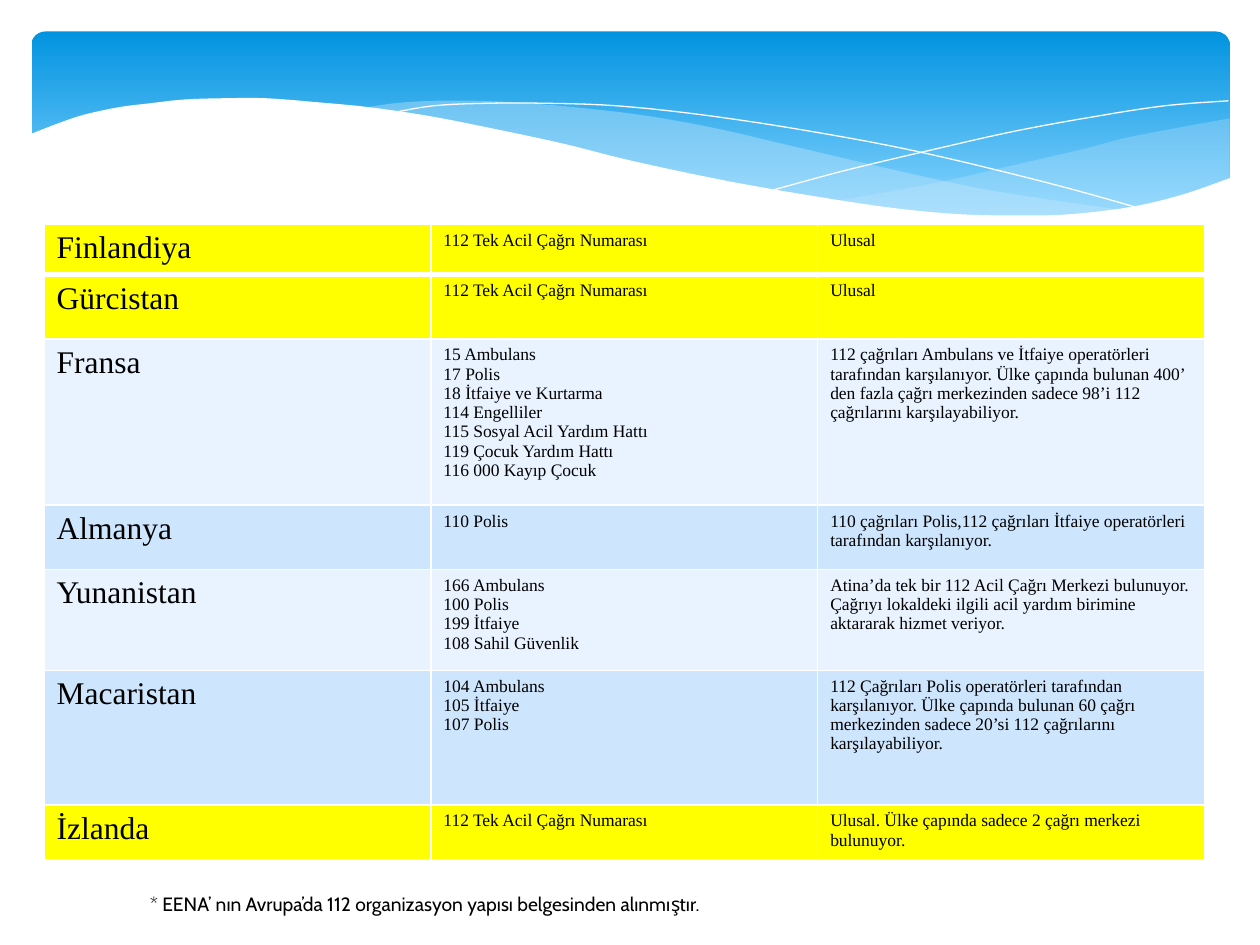
from lxml.etree import SubElement
from pptx import Presentation
from pptx.dml.color import RGBColor
from pptx.enum.shapes import MSO_SHAPE
from pptx.enum.text import MSO_AUTO_SIZE
from pptx.oxml.ns import qn
from pptx.util import Inches, Pt

GRID_COLS, GRID_ROWS = 100, 75
COLORS = {"white": "FFFFFF", "black": "000000", "sky": "0293E0", "light": "83D3FE",
          "wave": "C6E7FC", "single": "FFFF00", "pale": "E8F3FF", "blue": "CEE5FE"}
COUNTRY = {"name": "Times New Roman", "size": Pt(18)}
DETAIL = {"name": "Times New Roman", "size": Pt(10)}
SOURCE = {"name": "Cabin", "size": Pt(11)}

# Curves run through these (column, row) points.
RIGHT_WAVE_TOP = [(97.6, 9.4), (94.8, 9.9), (92.1, 10.4), (89.1, 11), (86.1, 11.8),
                  (80.5, 13.1), (75.3, 14.3), (70.6, 15.2), (66.1, 16)]
RIGHT_WAVE_BOTTOM = [(66.1, 16), (70.5, 16.5), (74.5, 16.9), (79.2, 17.2), (83.5, 17.2),
                     (87.2, 16.9), (90.5, 16.3), (94.2, 15.4), (97.6, 14.1)]
LONG_WAVE_TOP = [(89.3, 16.7), (83.7, 15.9), (77.5, 14.9), (70.6, 13.4), (62.9, 11.6),
                 (56.9, 10.2), (51.4, 9.2), (46.5, 8.6), (42, 8.2), (38, 8),
                 (34.4, 8), (31.3, 8.2), (28.6, 8.6)]
LONG_WAVE_BOTTOM = [(28.6, 8.6), (34.2, 9.4), (40.4, 10.6), (49.1, 12.6), (56.6, 14.3),
                    (63.4, 15.6), (69.5, 16.5), (74.8, 17), (79.6, 17.3), (83.8, 17.2),
                    (87.6, 16.9), (89.3, 16.7)]
FALLING_LINE = [(30.9, 9), (34.4, 8.4), (38.7, 8.2), (43.3, 8.2), (48.9, 8.4), (55.6, 9.1),
                (63.6, 10.3), (72.7, 12), (83.1, 14.5), (90.7, 16.6)]
RISING_LINE = [(61.3, 15.1), (67.2, 13.5), (74.8, 11.7), (80.6, 10.4), (86.6, 9.3),
               (92.4, 8.4), (97.5, 8)]
FRONT_WAVE = [(97.7, 14.1), (94, 15.4), (89.9, 16.4), (85, 17), (80.9, 17.1), (76.1, 17),
              (70.8, 16.5), (64.8, 15.6), (57.9, 14.4), (50.3, 12.8), (44.7, 11.4),
              (39.1, 10.2), (34, 9.2), (29.2, 8.5), (25, 8.1), (21.1, 7.8), (17.7, 7.8),
              (14.6, 7.9), (11.9, 8.2), (9.5, 8.5), (6.7, 9.1), (4.6, 9.8), (2.3, 10.7)]

SINGLE_NUMBER = "112 Tek Acil Çağrı Numarası"
# Row height, fill, then the three cells; a line break starts a new paragraph.
TABLE_ROWS = [
    (4, "single", "Finlandiya", SINGLE_NUMBER, "Ulusal"),
    (5.1, "single", "Gürcistan", SINGLE_NUMBER, "Ulusal"),
    (13.2, "pale", "Fransa",
     "15 Ambulans\n17 Polis\n18 İtfaiye ve Kurtarma\n114 Engelliler\n"
     "115 Sosyal Acil Yardım Hattı\n119 Çocuk Yardım Hattı\n116 000 Kayıp Çocuk",
     "112 çağrıları Ambulans ve İtfaiye operatörleri tarafından karşılanıyor. Ülke çapında "
     "bulunan 400’ den fazla çağrı merkezinden sadece 98’i 112 çağrılarını karşılayabiliyor."),
    (5.1, "blue", "Almanya", "110 Polis",
     "110 çağrıları Polis,112 çağrıları İtfaiye operatörleri tarafından karşılanıyor."),
    (8, "pale", "Yunanistan", "166 Ambulans\n100 Polis\n199 İtfaiye\n108 Sahil Güvenlik",
     "Atina’da tek bir 112 Acil Çağrı Merkezi bulunuyor. Çağrıyı lokaldeki ilgili acil "
     "yardım birimine aktararak hizmet veriyor."),
    (10.7, "blue", "Macaristan", "104 Ambulans\n105 İtfaiye\n107 Polis",
     "112 Çağrıları Polis operatörleri tarafından karşılanıyor. Ülke çapında bulunan 60 çağrı "
     "merkezinden sadece 20’si 112 çağrılarını karşılayabiliyor."),
    (4.2, "single", "İzlanda", SINGLE_NUMBER,
     "Ulusal. Ülke çapında sadece 2 çağrı merkezi bulunuyor."),
]


def smooth(points, steps=5):
    """Return points along a Catmull-Rom curve through the given points."""
    padded = [points[0], *points, points[-1]]
    curve = []
    for a, b, c, d in zip(padded, padded[1:], padded[2:], padded[3:]):
        for t in (i / steps for i in range(steps)):
            curve.append(tuple(
                q + t / 2 * (r - p + t * (2 * p - 5 * q + 4 * r - s + t * (3 * (q - r) + s - p)))
                for p, q, r, s in zip(a, b, c, d)))
    return curve + [points[-1]]


class SlideBuilder:
    def __init__(self, prs):
        self.s = prs.slides.add_slide(prs.slide_layouts[6])
        self.col = prs.slide_width / GRID_COLS
        self.row = prs.slide_height / GRID_ROWS

    def box(self, x, y, w, h):
        return [round(v) for v in (x * self.col, y * self.row, w * self.col, h * self.row)]

    def color(self, name):
        return RGBColor.from_string(COLORS[name])

    def text(self, tf, text, style):
        for i, line in enumerate(text.split("\n")):
            p = tf.add_paragraph() if i else tf.paragraphs[0]
            r = p.add_run()
            r.text = line
            for key, value in style.items():
                setattr(r.font, key, value)
            r.font.color.rgb = self.color("black")

    def banner(self, x, y, w, h):
        sp = self.s.shapes.add_shape(MSO_SHAPE.ROUNDED_RECTANGLE, *self.box(x, y, w, h))
        sp.adjustments[0] = 0.07
        sp.shadow.inherit = False
        sp.line.fill.background()
        sp.fill.gradient()
        sp.fill.gradient_angle = 270
        stops = zip(sp.fill.gradient_stops, (0, 0.9), ("sky", "light"))
        for stop, position, color in stops:
            stop.position = position
            stop.color.rgb = self.color(color)

    def outline(self, points, closed):
        pts = [(round(x * self.col), round(y * self.row)) for x, y in points]
        builder = self.s.shapes.build_freeform(*pts[0])
        builder.add_line_segments(pts[1:], close=closed)
        sp = builder.convert_to_shape()
        sp.shadow.inherit = False
        return sp

    def wave(self, points, color, alpha=100):
        sp = self.outline(points, True)
        sp.line.fill.background()
        sp.fill.solid()
        sp.fill.fore_color.rgb = self.color(color)
        if alpha < 100:
            clr = sp.fill._xPr.find(".//" + qn("a:srgbClr"))
            SubElement(clr, qn("a:alpha"), val=str(alpha * 1000))

    def curve(self, points):
        sp = self.outline(smooth(points), False)
        sp.fill.background()
        sp.line.color.rgb = self.color("white")
        sp.line.width = Pt(0)

    def borders(self, cell, bottom):
        tc_pr = cell._tc.get_or_add_tcPr()
        for side, width in (("L", 1), ("R", 1), ("T", 1), ("B", bottom)):
            ln = SubElement(tc_pr, qn(f"a:ln{side}"), w=str(Pt(width)))
            fill = SubElement(ln, qn("a:solidFill"))
            SubElement(fill, qn("a:srgbClr"), val=COLORS["white"])

    def table(self, x, y, w, rows):
        height = sum(row[0] for row in rows)
        tbl = self.s.shapes.add_table(len(rows), 3, *self.box(x, y, w, height)).table
        for i, (h, fill, *texts) in enumerate(rows):
            tbl.rows[i].height = round(h * self.row)
            for j, text in enumerate(texts):
                cell = tbl.cell(i, j)
                self.borders(cell, 1 if i else 3)
                cell.fill.solid()
                cell.fill.fore_color.rgb = self.color(fill)
                self.text(cell.text_frame, text, DETAIL if j else COUNTRY)

    def label(self, x, y, w, h, text, style):
        tf = self.s.shapes.add_textbox(*self.box(x, y, w, h)).text_frame
        tf.word_wrap = False
        tf.auto_size = MSO_AUTO_SIZE.SHAPE_TO_FIT_TEXT
        self.text(tf, text, style)


def main():
    prs = Presentation()
    prs.slide_width, prs.slide_height = Inches(10), Inches(7.5)
    s = SlideBuilder(prs)
    s.banner(2.5, 2.5, 95.1, 15.6)
    s.wave(smooth(RIGHT_WAVE_TOP) + smooth(RIGHT_WAVE_BOTTOM), "wave", 29)
    s.wave(smooth(LONG_WAVE_TOP) + smooth(LONG_WAVE_BOTTOM), "wave", 40)
    s.curve(FALLING_LINE)
    s.curve(RISING_LINE)
    s.wave(smooth(FRONT_WAVE) + [(2.3, 22.4), (97.7, 22.4)], "white")
    s.label(10.9, 70.3, 46.8, 2.9,
            "* EENA’ nın Avrupa’da 112 organizasyon yapısı belgesinden alınmıştır.", SOURCE)
    s.table(3.5, 17.8, 92.1, TABLE_ROWS)
    prs.save("out.pptx")


if __name__ == "__main__":
    main()
